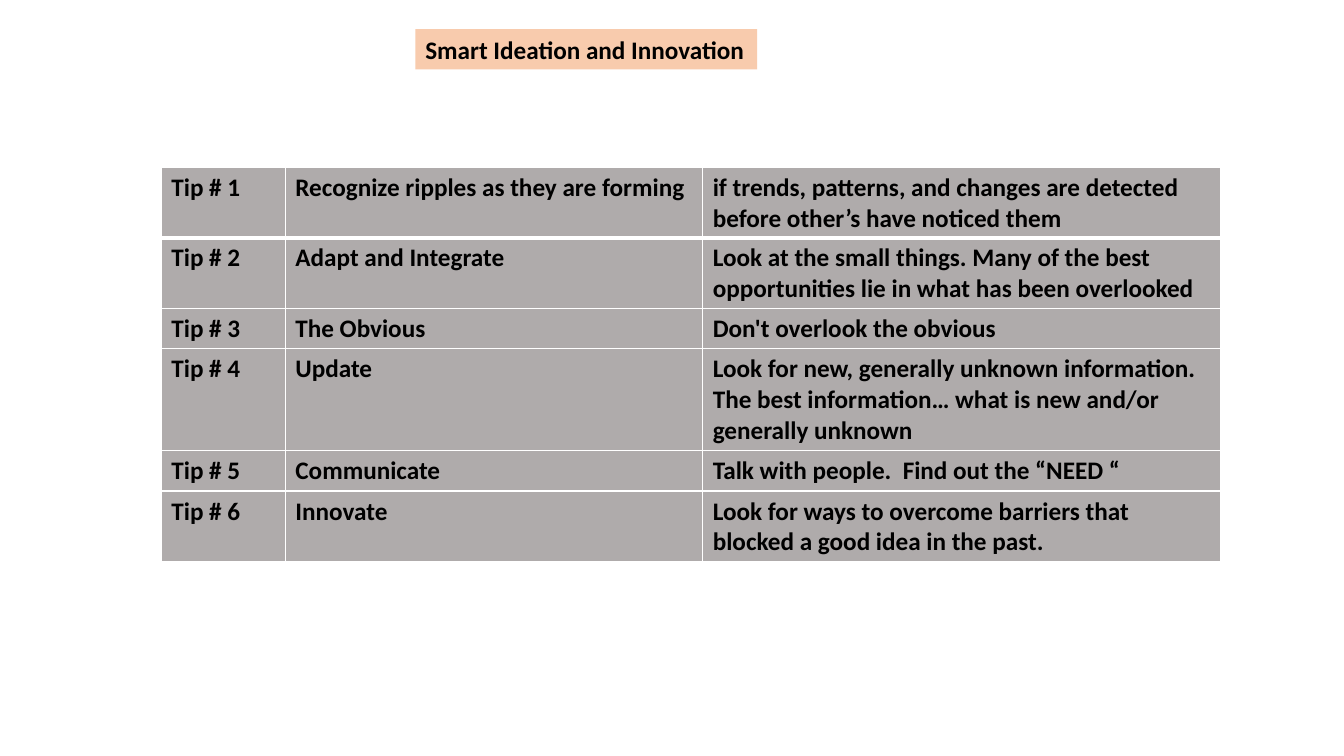
import pptx
import pptx.dml.color
import pptx.enum.shapes
import pptx.enum.text
import pptx.oxml
import pptx.oxml.ns
import pptx.util

EMU_PER_PX = 9144  # 100 px to the inch
WHITE, BLACK, GREY, PEACH = "FFFFFF", "000000", "AFABAB", "F8CBAD"

COLUMN_WIDTHS = [123, 414, 514]
TIPS = [
    # name, advice, row height
    ("Recognize ripples as they are forming",
     "if trends, patterns, and changes are detected before other’s have noticed them", 70),
    ("Adapt and Integrate",
     "Look at the small things. Many of the best opportunities lie in what has been overlooked", 70),
    ("The Obvious", "Don't overlook the obvious", 40),
    ("Update",
     "Look for new, generally unknown information. The best information… "
     "what is new and/or generally unknown", 101),
    ("Communicate", "Talk with people.  Find out the “NEED “", 40),
    ("Innovate", "Look for ways to overcome barriers that blocked a good idea in the past.", 70),
]


def px(length):
    return pptx.util.Emu(length * EMU_PER_PX)


def color(hex_string):
    return pptx.dml.color.RGBColor.from_string(hex_string)


def paint(element, hex_string):
    element.fill.solid()
    element.fill.fore_color.rgb = color(hex_string)


def write_text(text_frame, text, size=18, bold=True, font="Calibri", hex_string=BLACK):
    paragraph = text_frame.paragraphs[0]
    paragraph.alignment = pptx.enum.text.PP_ALIGN.LEFT
    run = paragraph.add_run()
    run.text = text
    run.font.size = pptx.util.Pt(size)
    run.font.bold = bold
    run.font.name = font
    run.font.color.rgb = color(hex_string)


def set_borders(cell, widths, hex_string):
    """Draw the cell borders; widths maps a side (L, R, T, B) to points."""
    properties = cell._tc.get_or_add_tcPr()
    for position, (side, width) in enumerate(widths.items()):
        border = pptx.oxml.parse_xml(
            f'<a:ln{side} {pptx.oxml.ns.nsdecls("a")} w="{pptx.util.Pt(width)}">'
            f'<a:solidFill><a:srgbClr val="{hex_string}"/></a:solidFill></a:ln{side}>')
        properties.insert(position, border)


def add_title(slide, text, left, top, width, height):
    shape = slide.shapes.add_shape(
        pptx.enum.shapes.MSO_SHAPE.RECTANGLE, px(left), px(top), px(width), px(height))
    shape.shadow.inherit = False
    shape.line.fill.background()
    paint(shape, PEACH)
    text_frame = shape.text_frame
    text_frame.word_wrap = False
    text_frame.auto_size = pptx.enum.text.MSO_AUTO_SIZE.SHAPE_TO_FIT_TEXT
    text_frame.vertical_anchor = pptx.enum.text.MSO_ANCHOR.TOP
    write_text(text_frame, text)


def add_tips_table(slide, left, top):
    heights = [height for _, _, height in TIPS]
    table = slide.shapes.add_table(
        len(TIPS), len(COLUMN_WIDTHS), px(left), px(top),
        px(sum(COLUMN_WIDTHS)), px(sum(heights))).table
    for column, width in zip(table.columns, COLUMN_WIDTHS):
        column.width = px(width)
    for index, (name, advice, height) in enumerate(TIPS):
        table.rows[index].height = px(height)
        # A thicker rule separates the first tip from the rest
        widths = {"L": 1, "R": 1, "T": 3 if index == 1 else 1, "B": 3 if index == 0 else 1}
        for cell, text in zip(table.rows[index].cells, (f"Tip # {index + 1}", name, advice)):
            paint(cell, GREY)
            set_borders(cell, widths, WHITE)
            write_text(cell.text_frame, text)


def main():
    presentation = pptx.Presentation()
    presentation.slide_width, presentation.slide_height = px(1333), px(750)
    slide = presentation.slides.add_slide(presentation.slide_layouts[6])

    # Heading
    add_title(slide, "Smart Ideation and Innovation", 412, 29, 339, 40)

    # Six tips
    add_tips_table(slide, 160, 166)

    presentation.save("out.pptx")


if __name__ == "__main__":
    main()
